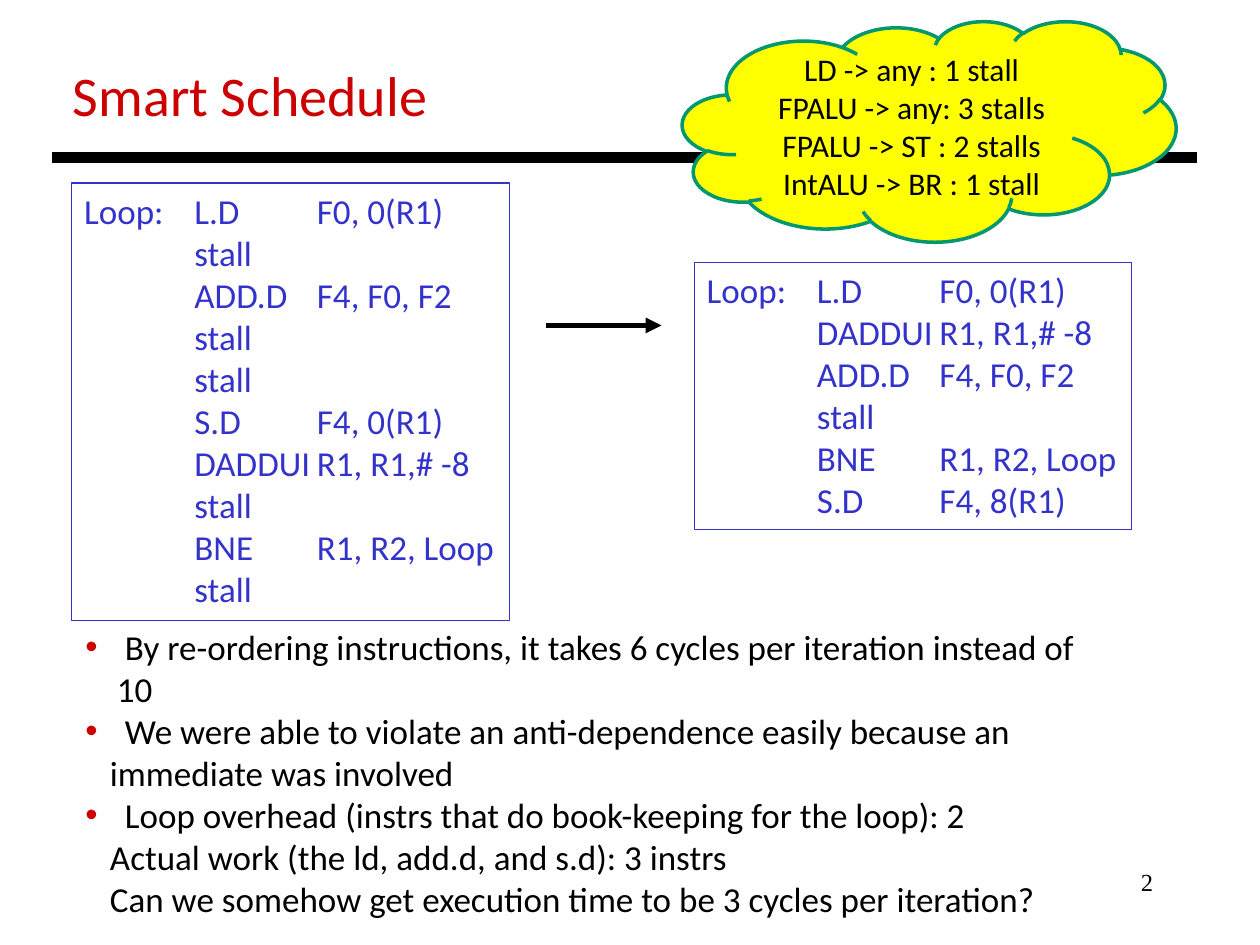
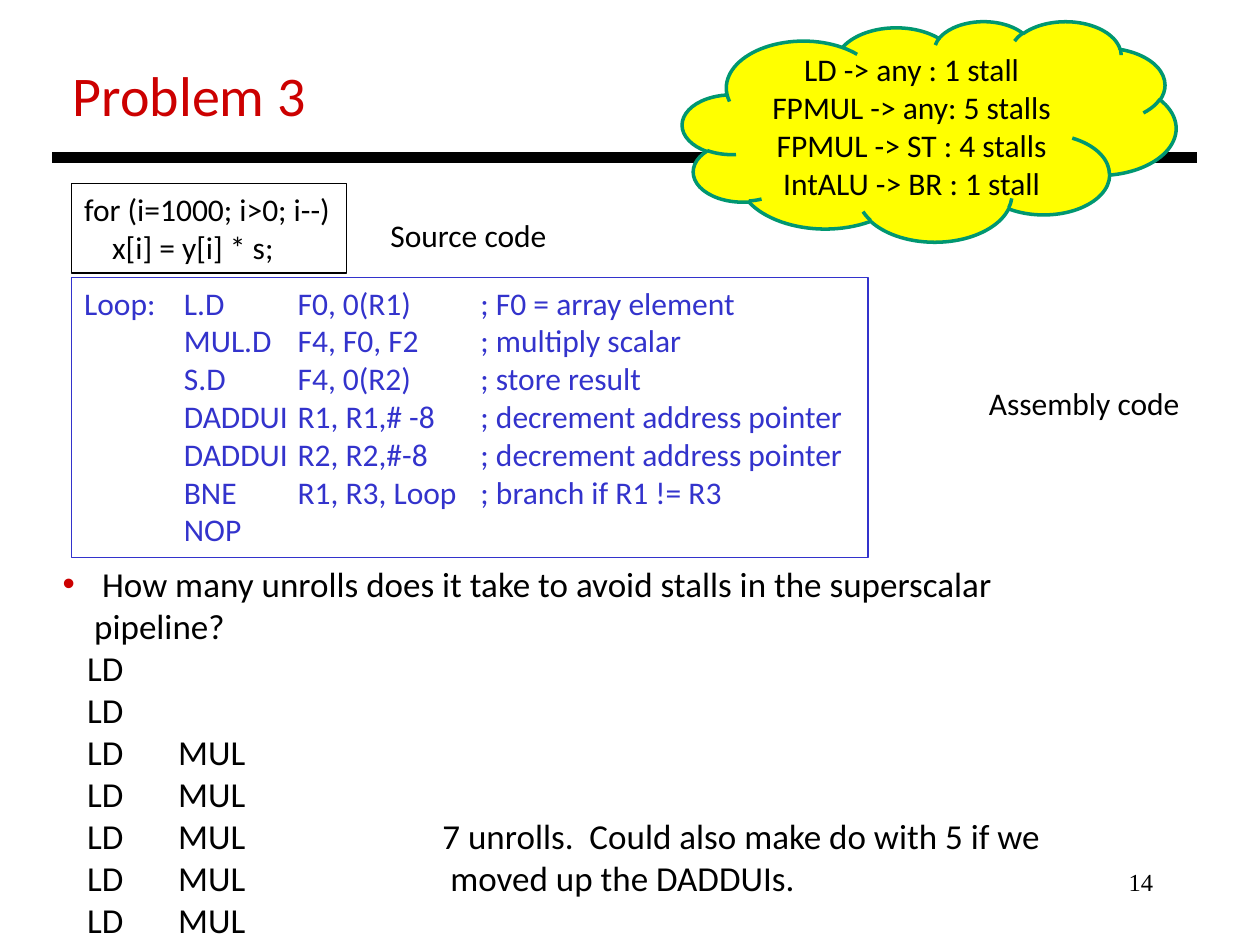
from lxml import etree
from pptx import Presentation
from pptx import util as u
from pptx.dml.color import RGBColor
from pptx.enum import shapes, text
from pptx.oxml.ns import qn

Pt = u.Pt
BLACK, RED, BLUE = "000000", "CC0000", "3333CC"
YELLOW, GREEN = "FFFF00", "009771"
LEFT, CENTER, RIGHT = text.PP_ALIGN.LEFT, text.PP_ALIGN.CENTER, text.PP_ALIGN.RIGHT
BULLET = "•"


def rgb(value):
    return RGBColor.from_string(value)


def put(obj, values):
    for name, value in values.items():
        setattr(obj, name, value)


def sub(parent, tag, **attrs):
    return etree.SubElement(parent, qn(tag), attrs)


class Deck:
    font = "Calibri"
    hang = 18

    def __init__(self):
        self.prs = Presentation()
        put(self.prs, {"slide_width": Pt(720), "slide_height": Pt(540)})

    # Slide with the shared title, rule and page number
    def slide(self, title, number):
        self.s = self.prs.slides.add_slide(self.prs.slide_layouts[6])
        self.text((516, 492, 150, 36), [number], size=14, font="Times New Roman",
                  align=RIGHT, right=7.2)
        self.text((34.5, 31, 220, 46), [title], size=32, color=RED)
        self.line((30, 90), (684, 90), 6)

    def fill_text(self, sp, lines, size=18, color=BLACK, font=None, align=LEFT,
                  tabs=(), right=0, anchor=text.MSO_ANCHOR.TOP):
        tf = sp.text_frame
        put(tf, {"word_wrap": True, "margin_right": Pt(right), "vertical_anchor": anchor})
        for i, line in enumerate(lines):
            p = tf.paragraphs[0] if i == 0 else tf.add_paragraph()
            p.alignment = align
            r = p.add_run()
            r.text = line.removeprefix(BULLET)
            put(r.font, {"size": Pt(size), "name": font or self.font})
            r.font.color.rgb = rgb(color)
            pr = p._p.get_or_add_pPr()
            if line.startswith(BULLET):
                self.bullet(pr)
            elif tabs:
                stops = sub(pr, "a:tabLst")
                for stop in tabs:
                    sub(stops, "a:tab", pos=str(Pt(stop)), algn="l")

    def bullet(self, pr):
        pr.set("marL", str(Pt(self.hang)))
        pr.set("indent", str(-Pt(self.hang)))
        sub(sub(pr, "a:buClr"), "a:srgbClr", val=RED)
        sub(pr, "a:buFont", typeface="Arial")
        sub(pr, "a:buChar", char=BULLET)

    def text(self, box, lines, **style):
        sp = self.s.shapes.add_textbox(*map(Pt, box))
        self.fill_text(sp, lines, **style)

    def shape(self, kind, box, lines, line, width=0.75, fill=None, **style):
        sp = self.s.shapes.add_shape(kind, *map(Pt, box))
        sp.shadow.inherit = False
        if fill:
            sp.fill.solid()
            sp.fill.fore_color.rgb = rgb(fill)
        else:
            sp.fill.background()
        sp.line.color.rgb = rgb(line)
        sp.line.width = Pt(width)
        self.fill_text(sp, lines, **style)

    def code(self, box, lines, color=BLUE, **style):
        self.shape(shapes.MSO_SHAPE.RECTANGLE, box, lines, color, color=color, **style)

    def cloud(self, lines):
        self.shape(shapes.MSO_SHAPE.CLOUD, (390, 12, 282, 126), lines, GREEN, 2, YELLOW,
                   align=CENTER, right=7.2, anchor=text.MSO_ANCHOR.MIDDLE)

    def line(self, start, end, width, arrow=False):
        c = self.s.shapes.add_connector(shapes.MSO_CONNECTOR.STRAIGHT,
                                        *map(Pt, start + end))
        c.line.color.rgb = rgb(BLACK)
        c.line.width = Pt(width)
        if arrow:
            sub(c.line._get_or_add_ln(), "a:tailEnd", type="triangle")
        sub(c._element.spPr, "a:effectLst")


def smart_schedule(d):
    d.slide("Smart Schedule", "2")
    d.text((41.75, 354, 602.5, 153), [
        "• By re-ordering instructions, it takes 6 cycles per iteration instead of 10",
        "• We were able to violate an anti-dependence easily because an",
        "\timmediate was involved",
        "• Loop overhead (instrs that do book-keeping for the loop): 2",
        "\tActual work (the ld, add.d, and s.d): 3 instrs",
        "\tCan we somehow get execution time to be 3 cycles per iteration?",
    ], size=20, tabs=(14,), right=20)

    # Code before and after re-ordering
    columns = (63, 133)
    d.code((41, 104.5, 250, 250), [
        "Loop:\tL.D\tF0, 0(R1)",
        "\tstall",
        "\tADD.D\tF4, F0, F2",
        "\tstall",
        "\tstall",
        "\tS.D\tF4, 0(R1)",
        "\tDADDUI\tR1, R1,# -8",
        "\tstall",
        "\tBNE\tR1, R2, Loop",
        "\tstall",
    ], size=20, tabs=columns)
    d.code((396.75, 150, 250, 152.5), [
        "Loop:\tL.D\tF0, 0(R1)",
        "\tDADDUI\tR1, R1,# -8",
        "\tADD.D\tF4, F0, F2",
        "\tstall",
        "\tBNE\tR1, R2, Loop",
        "\tS.D\tF4, 8(R1)",
    ], size=20, tabs=columns)
    d.line((312, 186), (378, 186), 3, arrow=True)
    d.cloud(["LD -> any : 1 stall", "FPALU -> any: 3 stalls",
             "FPALU -> ST : 2 stalls", "IntALU -> BR : 1 stall"])


def problem_3(d):
    d.slide("Problem 3", "14")

    # Source and assembly code with their labels
    d.code((41, 105, 157, 51), ["for (i=1000; i>0; i--)", "\tx[i] = y[i] * s;"],
           color=BLACK, tabs=(16,))
    d.code((41, 158.5, 455, 160), [
        "Loop:\tL.D\tF0, 0(R1)\t; F0 = array element",
        "\tMUL.D\tF4, F0, F2\t; multiply scalar",
        "\tS.D\tF4, 0(R2)\t; store result",
        "\tDADDUI\tR1, R1,# -8\t; decrement address pointer",
        "\tDADDUI\tR2, R2,#-8\t; decrement address pointer",
        "\tBNE\tR1, R3, Loop\t; branch if R1 != R3",
        "\tNOP",
    ], tabs=(57, 122, 226.5))
    d.text((216, 120, 105, 29), ["Source code"])
    d.text((558, 216, 125, 29), ["Assembly code"])
    d.cloud(["LD -> any : 1 stall", "FPMUL -> any: 5 stalls",
             "FPMUL -> ST : 4 stalls", "IntALU -> BR : 1 stall"])

    # Question and unrolled schedule
    d.text((28.75, 318, 622, 225), [
        "• How many unrolls does it take to avoid stalls in the superscalar pipeline?",
        "\tLD",
        "\tLD",
        "\tLD\tMUL",
        "\tLD\tMUL",
        "\tLD\tMUL\t7 unrolls.  Could also make do with 5 if we",
        "\tLD\tMUL\t moved up the DADDUIs.",
        "\tLD\tMUL",
    ], size=20, tabs=(14, 66, 217), right=20)


def main():
    d = Deck()
    smart_schedule(d)
    problem_3(d)
    d.prs.save("out.pptx")


if __name__ == "__main__":
    main()
